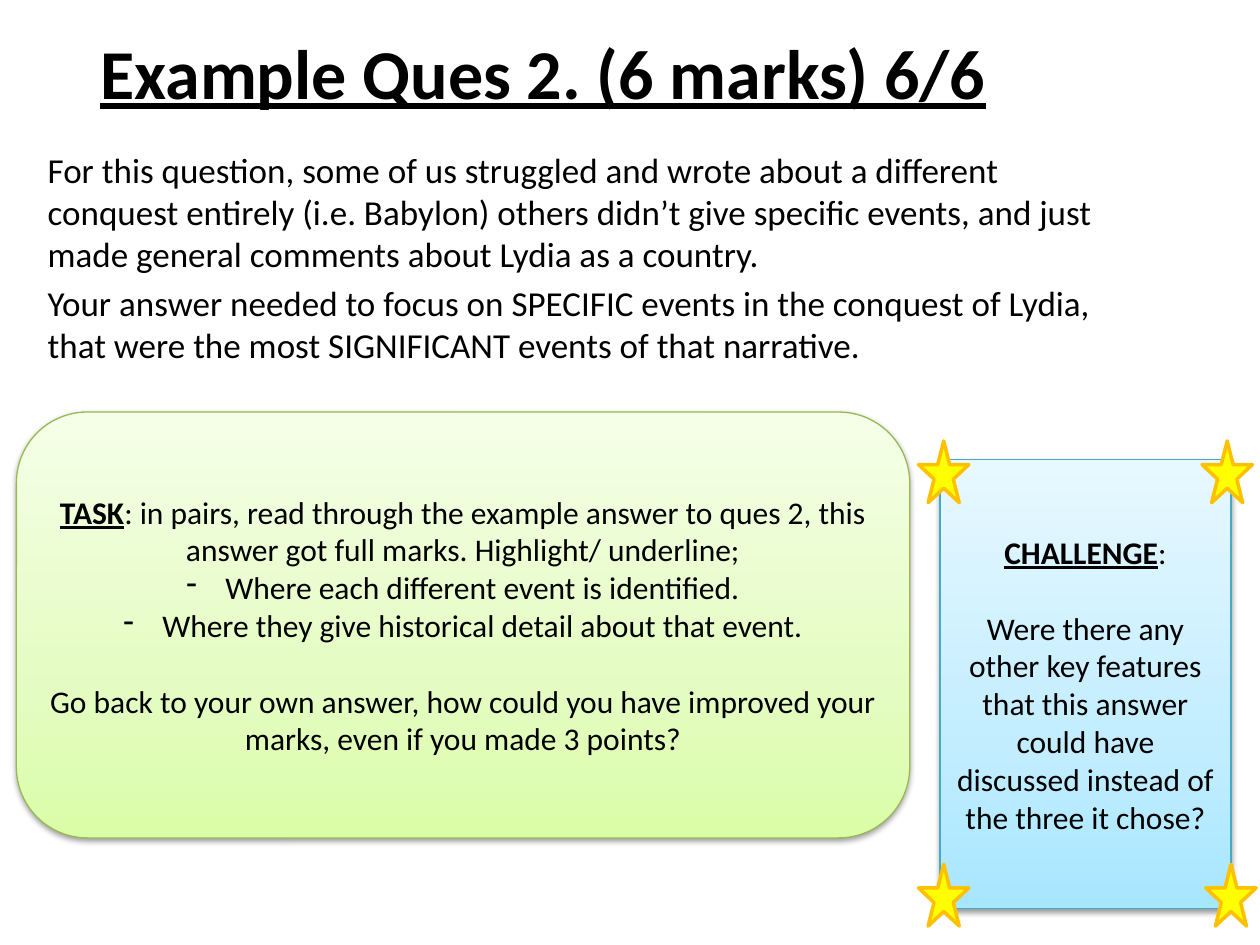
from copy import deepcopy

from lxml import etree
from pptx import Presentation
from pptx.dml.color import RGBColor
from pptx.enum.shapes import MSO_SHAPE
from pptx.enum.text import MSO_ANCHOR, PP_ALIGN
from pptx.oxml import parse_xml
from pptx.oxml.ns import nsdecls, qn
from pptx.util import Inches, Pt

CENTER, LEFT = PP_ALIGN.CENTER, PP_ALIGN.LEFT
MIDDLE, TOP = MSO_ANCHOR.MIDDLE, MSO_ANCHOR.TOP
RECTANGLE, ROUNDED, STAR = (
    MSO_SHAPE.RECTANGLE, MSO_SHAPE.ROUNDED_RECTANGLE, MSO_SHAPE.STAR_5_POINT)

FONT = "Calibri"
BLANK_LAYOUT = 6
BLANK_LINE = 21.6
GREEN = ("DAFDA7", "E4FCC2", "F5FFE7")
BLUE = ("A7E6FF", "C1EDFF", "E7F8FF")
SHADOW = (
    f'<a:outerShdw {nsdecls("a")} blurRad="40000" dist="20000" dir="5400000" '
    'rotWithShape="0"><a:srgbClr val="000000"><a:alpha val="38000"/>'
    '</a:srgbClr></a:outerShdw>')


def color(hex_value):
    return RGBColor.from_string(hex_value)


def add_paragraph(frame, text, size=18, align=CENTER, heading="",
                  before=0, dash=False):
    """Append a paragraph, opened by a bold underlined heading if given."""
    first = frame.paragraphs[0]
    paragraph = frame.add_paragraph() if first.runs else first
    paragraph.alignment = align
    paragraph.space_before = Pt(before)
    for content, strong in ((heading, True), (text, False)):
        if content:
            run = paragraph.add_run()
            run.text = content
            run.font.name = FONT
            run.font.size = Pt(size)
            run.font.bold = run.font.underline = strong
            run.font.color.rgb = color("000000")
    if dash:
        properties = paragraph._p.get_or_add_pPr()
        indent = Inches(0.31)
        properties.set("marL", str(indent))
        properties.set("indent", str(-indent))
        etree.SubElement(properties, qn("a:buChar"), char="-")


def add_text_area(slide, box, anchor):
    frame = slide.shapes.add_textbox(*map(Inches, box)).text_frame
    frame.word_wrap = True
    frame.vertical_anchor = anchor
    return frame


def add_outlined_shape(slide, kind, box, line, width):
    shape = slide.shapes.add_shape(kind, *map(Inches, box))
    shape.shadow.inherit = False
    shape.line.color.rgb = color(line)
    shape.line.width = Pt(width)
    return shape


def add_panel(slide, kind, box, shades, line):
    """Add a shadowed panel shaded from bottom to top; return its text frame."""
    panel = add_outlined_shape(slide, kind, box, line, 0.75)
    panel.fill.gradient()
    panel.fill.gradient_angle = 90
    stop_list = panel._element.spPr.find(qn("a:gradFill")).find(qn("a:gsLst"))
    stop_list.insert(1, deepcopy(stop_list[0]))
    for stop, shade, position in zip(panel.fill.gradient_stops, shades, (0, 0.35, 1)):
        stop.color.rgb = color(shade)
        stop.position = position
    panel._element.spPr.find(qn("a:effectLst")).append(parse_xml(SHADOW))
    frame = panel.text_frame
    frame.word_wrap = True
    frame.vertical_anchor = MIDDLE
    return frame


def add_star(slide, left, top):
    star = add_outlined_shape(slide, STAR, (left, top, 0.4, 0.49), "FFC000", 2)
    star.fill.solid()
    star.fill.fore_color.rgb = color("FFFF00")


def main():
    deck = Presentation()
    deck.slide_width, deck.slide_height = Inches(10), Inches(7.5)
    slide = deck.slides.add_slide(deck.slide_layouts[BLANK_LAYOUT])

    title = add_text_area(slide, (0, 0, 8.62, 1.13), MIDDLE)
    add_paragraph(title, "", size=40, heading="Example Ques 2. (6 marks) 6/6")

    feedback = add_text_area(slide, (0.28, 1.13, 8.62, 4.76), TOP)
    for comment in (
        "For this question, some of us struggled and wrote about a different "
        "conquest entirely (i.e. Babylon) others didn’t give specific events, "
        "and just made general comments about Lydia as a country.",
        "Your answer needed to focus on SPECIFIC events in the conquest of "
        "Lydia, that were the most SIGNIFICANT events of that narrative.",
    ):
        add_paragraph(feedback, comment, size=20, align=LEFT, before=4)

    task = add_panel(slide, ROUNDED, (0.13, 3.27, 7.09, 3.38), GREEN, "98B955")
    add_paragraph(
        task, ": in pairs, read through the example answer to ques 2, this "
        "answer got full marks. Highlight/ underline;", heading="TASK")
    for step in ("Where each different event is identified.",
                 "Where they give historical detail about that event."):
        add_paragraph(task, step, dash=True)
    add_paragraph(
        task, "Go back to your own answer, how could you have improved your "
        "marks, even if you made 3 points?", before=BLANK_LINE)

    challenge = add_panel(slide, RECTANGLE, (7.46, 3.65, 2.31, 3.56), BLUE, "46AAC5")
    add_paragraph(challenge, ":", heading="CHALLENGE")
    add_paragraph(
        challenge, "Were there any other key features that this answer could "
        "have discussed instead of the three it chose?", before=BLANK_LINE)

    for left, top in ((9.57, 6.86), (9.54, 3.5), (7.29, 6.86), (7.29, 3.5)):
        add_star(slide, left, top)

    deck.save("out.pptx")


if __name__ == "__main__":
    main()
